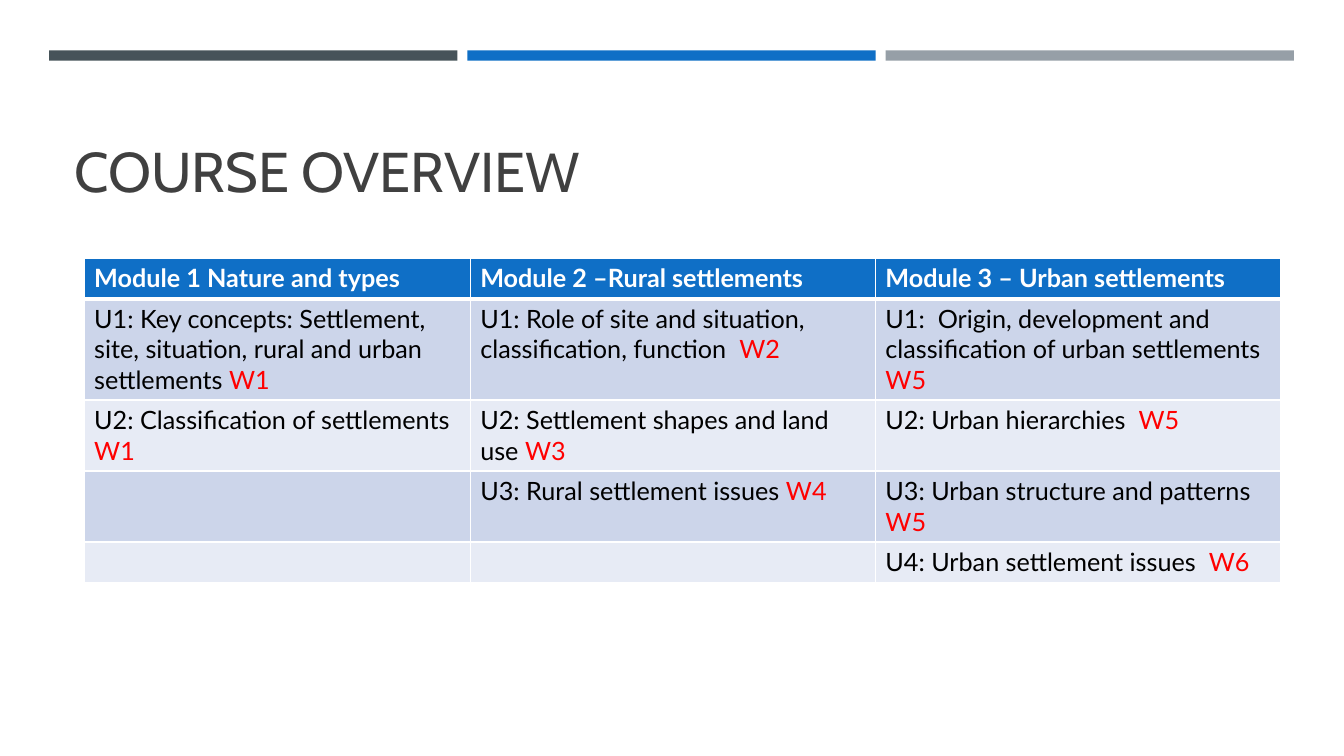
from dataclasses import dataclass

from lxml import etree
from pptx import Presentation
from pptx import util as u
from pptx.dml.color import RGBColor
from pptx.enum import shapes, text
from pptx.oxml import ns


@dataclass(frozen=True)
class Theme:
    title_font: str = "Cabin"
    body_font: str = "Lato"
    title_size: int = 40
    body_size: int = 18
    title_color: str = "404040"
    body_color: str = "000000"
    week_color: str = "FF0000"
    header_color: str = "FFFFFF"
    header_fill: str = "0F6FC6"
    border_color: str = "FFFFFF"
    bars: tuple = ("465359", "0F6FC6", "969FA7")
    bands: tuple = ("CCD5EA", "E7EBF5")


MODULES = ("Module 1 Nature and types", "Module 2 –Rural settlements", "Module 3 – Urban settlements")
# Each unit is a description and the week in which it is taught.
UNITS = (
    (
        ("U1: Key concepts: Settlement, site, situation, rural and urban settlements ", "W1"),
        ("U1: Role of site and situation,  classification, function  ", "W2"),
        ("U1:  Origin, development and classification of urban settlements ", "W5"),
    ),
    (
        ("U2: Classification of settlements ", "W1"),
        ("U2: Settlement shapes and land use ", "W3"),
        ("U2: Urban hierarchies  ", "W5"),
    ),
    (None, ("U3: Rural settlement issues ", "W4"), ("U3: Urban structure and patterns ", "W5")),
    (None, None, ("U4: Urban settlement issues  ", "W6")),
)
COLUMN_WIDTHS = (9.73, 10.21, 10.21)
ROW_HEIGHTS = (1.03, 2.55, 1.79, 1.79, 1.03)


class SlideBuilder:
    def __init__(self, slide, theme):
        self.slide = slide
        self.theme = theme

    def format_run(self, run, color, font, size, bold=False):
        run.font.name = font
        run.font.size = u.Pt(size)
        run.font.bold = bold
        run.font.color.rgb = RGBColor.from_string(color)

    def bar(self, left, top, width, height, color):
        shape = self.slide.shapes.add_shape(
            shapes.MSO_SHAPE.RECTANGLE, u.Cm(left), u.Cm(top), u.Cm(width), u.Cm(height)
        )
        shape.shadow.inherit = False
        shape.fill.solid()
        shape.fill.fore_color.rgb = RGBColor.from_string(color)
        shape.line.fill.background()

    def title(self, wording, left, top, width, height):
        box = self.slide.shapes.add_textbox(u.Cm(left), u.Cm(top), u.Cm(width), u.Cm(height))
        frame = box.text_frame
        frame.word_wrap = True
        frame.vertical_anchor = text.MSO_ANCHOR.BOTTOM
        frame.text = wording
        self.format_run(
            frame.paragraphs[0].runs[0], self.theme.title_color, self.theme.title_font, self.theme.title_size
        )

    def cell_borders(self, cell, top, bottom):
        """Draw all four sides, with the top and bottom widths in points."""
        properties = cell._tc.get_or_add_tcPr()
        for side, width in (("L", 1), ("R", 1), ("T", top), ("B", bottom)):
            line = etree.SubElement(properties, ns.qn(f"a:ln{side}"), w=str(u.Pt(width)))
            fill = etree.SubElement(line, ns.qn("a:solidFill"))
            etree.SubElement(fill, ns.qn("a:srgbClr"), val=self.theme.border_color)

    def cell(self, cell, pieces, fill, top=1, bottom=1, bold=False):
        """Fill a cell with (wording, color) pieces."""
        self.cell_borders(cell, top, bottom)
        cell.fill.solid()
        cell.fill.fore_color.rgb = RGBColor.from_string(fill)
        paragraph = cell.text_frame.paragraphs[0]
        for wording, color in pieces:
            run = paragraph.add_run()
            run.text = wording
            self.format_run(run, color, self.theme.body_font, self.theme.body_size, bold)

    def module_table(self, left, top):
        theme = self.theme
        table = self.slide.shapes.add_table(
            len(ROW_HEIGHTS), len(COLUMN_WIDTHS), u.Cm(left), u.Cm(top),
            u.Cm(sum(COLUMN_WIDTHS)), u.Cm(sum(ROW_HEIGHTS)),
        ).table
        for column, width in zip(table.columns, COLUMN_WIDTHS):
            column.width = u.Cm(width)
        for row, height in zip(table.rows, ROW_HEIGHTS):
            row.height = u.Cm(height)
        for index, module in enumerate(MODULES):
            self.cell(
                table.cell(0, index), [(module, theme.header_color)], theme.header_fill, bottom=3, bold=True
            )
        for row, units in enumerate(UNITS, start=1):
            for column, unit in enumerate(units):
                pieces = zip(unit, (theme.body_color, theme.week_color)) if unit else ()
                fill = theme.bands[(row - 1) % 2]
                self.cell(table.cell(row, column), pieces, fill, top=3 if row == 1 else 1)


def main():
    presentation = Presentation()
    presentation.slide_width = u.Cm(33.87)
    presentation.slide_height = u.Cm(19.05)
    theme = Theme()
    builder = SlideBuilder(presentation.slides.add_slide(presentation.slide_layouts[6]), theme)

    bar_width, bar_gap = 10.29, 0.25
    for index, color in enumerate(theme.bars):
        builder.bar(1.24 + index * (bar_width + bar_gap), 1.27, bar_width, 0.26, color)
    builder.title("COURSE OVERVIEW", 1.63, 1.96, 30.63, 3.3)
    builder.module_table(2.12, 6.5)
    presentation.save("out.pptx")


if __name__ == "__main__":
    main()
